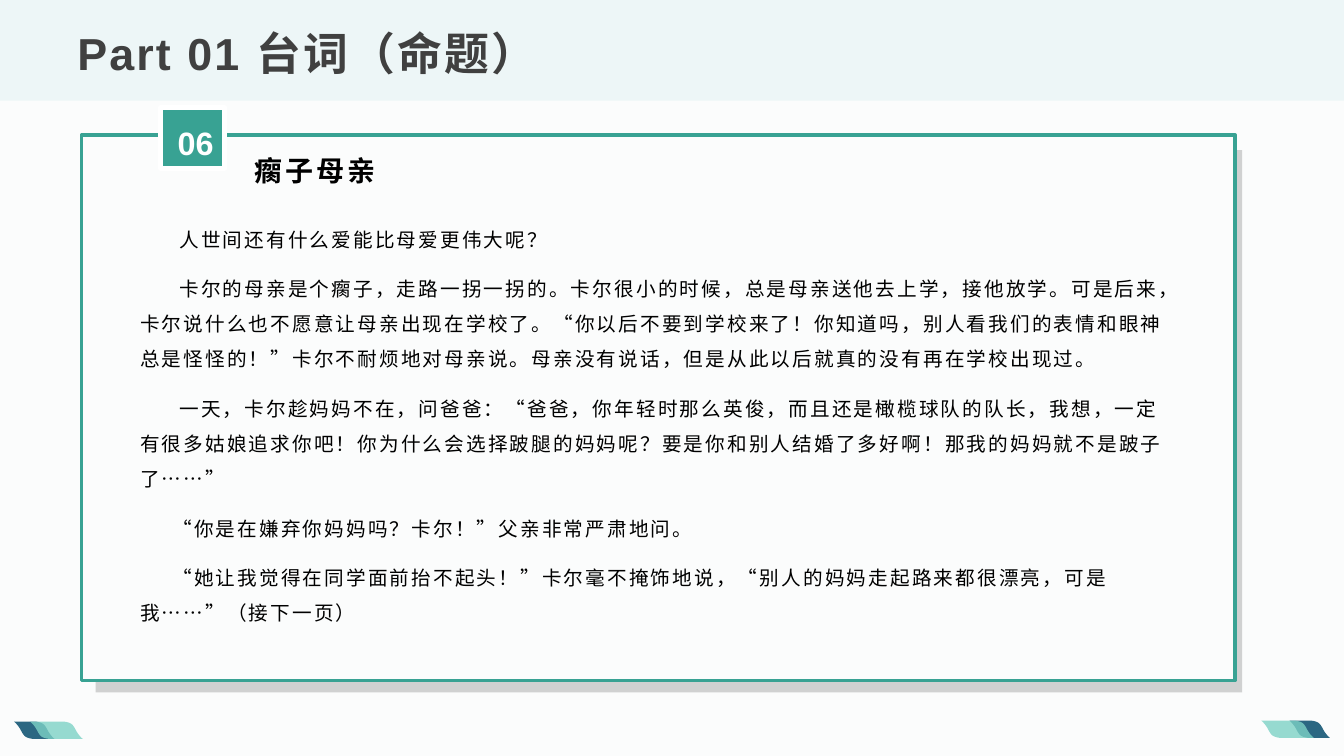
from lxml import etree
from pptx import Presentation
from pptx.dml.color import RGBColor
from pptx.enum.shapes import MSO_SHAPE
from pptx.enum.text import MSO_ANCHOR, PP_ALIGN
from pptx.oxml.ns import qn
from pptx.util import Inches, Pt

RECT = MSO_SHAPE.RECTANGLE
TOP, BOTTOM = MSO_ANCHOR.TOP, MSO_ANCHOR.BOTTOM
LEFT, CENTER = PP_ALIGN.LEFT, PP_ALIGN.CENTER
LATIN, CJK = "Arial", "Noto Sans CJK SC"
COLORS = {
    "paper": "FBFCFC", "band": "EDF6F7", "green": "38A293", "shade": "BFBFBF",
    "navy": "2B6782", "mint": "7DD2C6", "title": "404040",
    "black": "000000", "white": "FFFFFF",
}

# (first-line indent in inches, text); a line opening with a quote starts closer in
STORY = [
    (0.39, "人世间还有什么爱能比母爱更伟大呢？"),
    (0.39, "卡尔的母亲是个瘸子，走路一拐一拐的。卡尔很小的时候，总是母亲送他去上学，接他放学。"
           "可是后来，卡尔说什么也不愿意让母亲出现在学校了。“你以后不要到学校来了！你知道吗，"
           "别人看我们的表情和眼神总是怪怪的！”卡尔不耐烦地对母亲说。母亲没有说话，"
           "但是从此以后就真的没有再在学校出现过。"),
    (0.39, "一天，卡尔趁妈妈不在，问爸爸：“爸爸，你年轻时那么英俊，而且还是橄榄球队的队长，"
           "我想，一定有很多姑娘追求你吧！你为什么会选择跛腿的妈妈呢？"
           "要是你和别人结婚了多好啊！那我的妈妈就不是跛子了……”"),
    (0.32, "“你是在嫌弃你妈妈吗？卡尔！”父亲非常严肃地问。"),
    (0.32, "“她让我觉得在同学面前抬不起头！”卡尔毫不掩饰地说，"
           "“别人的妈妈走起路来都很漂亮，可是我……”（接下一页）"),
]

LEAF_HEIGHT = 0.17
LEAF_SLANT = 0.18
LEAF_CURVES = [
    [(0, 0), (0.06, 0.01), (0.08, 0.02), (0.11, 0.08)],
    [(0.11, 0.08), (0.14, 0.14), (0.18, 0.17), (0.18, 0.17)],
]


def bezier(points, steps=8):
    """Points along a cubic curve, without its start."""
    for i in range(1, steps + 1):
        t = i / steps
        weights = ((1 - t) ** 3, 3 * t * (1 - t) ** 2, 3 * t * t * (1 - t), t ** 3)
        yield tuple(sum(w * p[axis] for w, p in zip(weights, points)) for axis in (0, 1))


def leaf_outline(width):
    """Right edge from the top down, then the same edge turned half round."""
    edge = [(0, 0)] + [pt for curve in LEAF_CURVES for pt in bezier(curve)]
    right = [(width - LEAF_SLANT + x, y) for x, y in edge]
    return right + [(width - x, LEAF_HEIGHT - y) for x, y in right]


class SlideBuilder:
    def __init__(self, prs):
        self.slide = prs.slides.add_slide(prs.slide_layouts[6])
        fill = self.slide.background.fill
        fill.solid()
        fill.fore_color.rgb = self.color("paper")

    def color(self, name):
        return RGBColor.from_string(COLORS[name])

    def paint(self, sp, fill, line=None, weight=0, alpha=None):
        sp.shadow.inherit = False
        sp.fill.solid()
        sp.fill.fore_color.rgb = self.color(fill)
        if alpha:
            clr = sp.fill._xPr.find(qn("a:solidFill"))[0]
            etree.SubElement(clr, qn("a:alpha")).set("val", str(alpha * 1000))
        if line:
            sp.line.color.rgb = self.color(line)
            sp.line.width = Pt(weight)
        else:
            sp.line.fill.background()

    def rect(self, box, fill, **style):
        sp = self.slide.shapes.add_shape(RECT, *map(Inches, box))
        self.paint(sp, fill, **style)

    def leaves(self, top, *leaves):
        """Group of leaves, each given as left, width, fill and alpha."""
        shapes = self.slide.shapes.add_group_shape().shapes
        for left, width, fill, alpha in leaves:
            pts = [(Inches(left + x), Inches(top + y)) for x, y in leaf_outline(width)]
            builder = shapes.build_freeform(*pts[0])
            builder.add_line_segments(pts[1:], close=True)
            self.paint(builder.convert_to_shape(), fill, alpha=alpha)

    def text(self, box, paragraphs, size, color="black", bold=False, spacing=0,
             margins=(0.1, 0.05, 0.1, 0.05), anchor=TOP, **para_format):
        """Text box; paragraphs are (first-line indent, text) pairs."""
        tf = self.slide.shapes.add_textbox(*map(Inches, box)).text_frame
        tf.word_wrap = True
        tf.vertical_anchor = anchor
        for side, value in zip(("left", "top", "right", "bottom"), margins):
            setattr(tf, f"margin_{side}", Inches(value))
        for i, (indent, text) in enumerate(paragraphs):
            p = tf.add_paragraph() if i else tf.paragraphs[0]
            for name, value in para_format.items():
                setattr(p, name, value)
            if indent:
                pPr = p._p.get_or_add_pPr()
                pPr.set("marL", "0")
                pPr.set("indent", str(Inches(indent)))
            r = p.add_run()
            r.text = text
            font = {"size": Pt(size), "bold": bold, "name": LATIN}
            for name, value in font.items():
                setattr(r.font, name, value)
            r.font.color.rgb = self.color(color)
            rPr = r.font._element
            rPr.set("spc", str(int(spacing * 100)))
            etree.SubElement(rPr, qn("a:ea")).set("typeface", CJK)


def main():
    prs = Presentation()
    prs.slide_width, prs.slide_height = Inches(13.33), Inches(7.5)
    s = SlideBuilder(prs)

    s.rect((0.95, 1.49, 11.37, 5.38), "shade", alpha=70)
    s.rect((0.81, 1.34, 11.44, 5.41), "paper", line="green", weight=2.5)
    s.rect((0, 0, 13.33, 1), "band")

    s.leaves(7.16, (0.14, 0.4, "navy", None), (0.3, 0.52, "mint", 80))
    s.leaves(7.15, (12.79, 0.4, "navy", None), (12.51, 0.52, "mint", 80))

    s.text((1.29, 2.14, 10.48, 3.94), STORY, 14, spacing=1.5,
           margins=(0.1, 0, 0.1, 0.05), line_spacing=1.5, space_after=Pt(10))
    s.text((2.25, 1.33, 4.5, 0.53), [(0.18, "瘸子母亲")], 20, bold=True, spacing=2,
           margins=(0.1, 0.05, 0.1, 0), anchor=BOTTOM, line_spacing=1.2)
    s.text((0.67, 0.17, 12, 0.67), [(0, "Part 01 台词（命题）")], 32, "title",
           bold=True, spacing=1.5, anchor=BOTTOM, alignment=LEFT)

    s.rect((1.59, 1.07, 0.64, 0.6), "green", line="white", weight=3.5)
    s.text((1.65, 1.13, 0.58, 0.64), [(0, "06")], 23.1, "white", bold=True,
           alignment=CENTER, line_spacing=1.1)

    prs.save("out.pptx")


if __name__ == "__main__":
    main()
